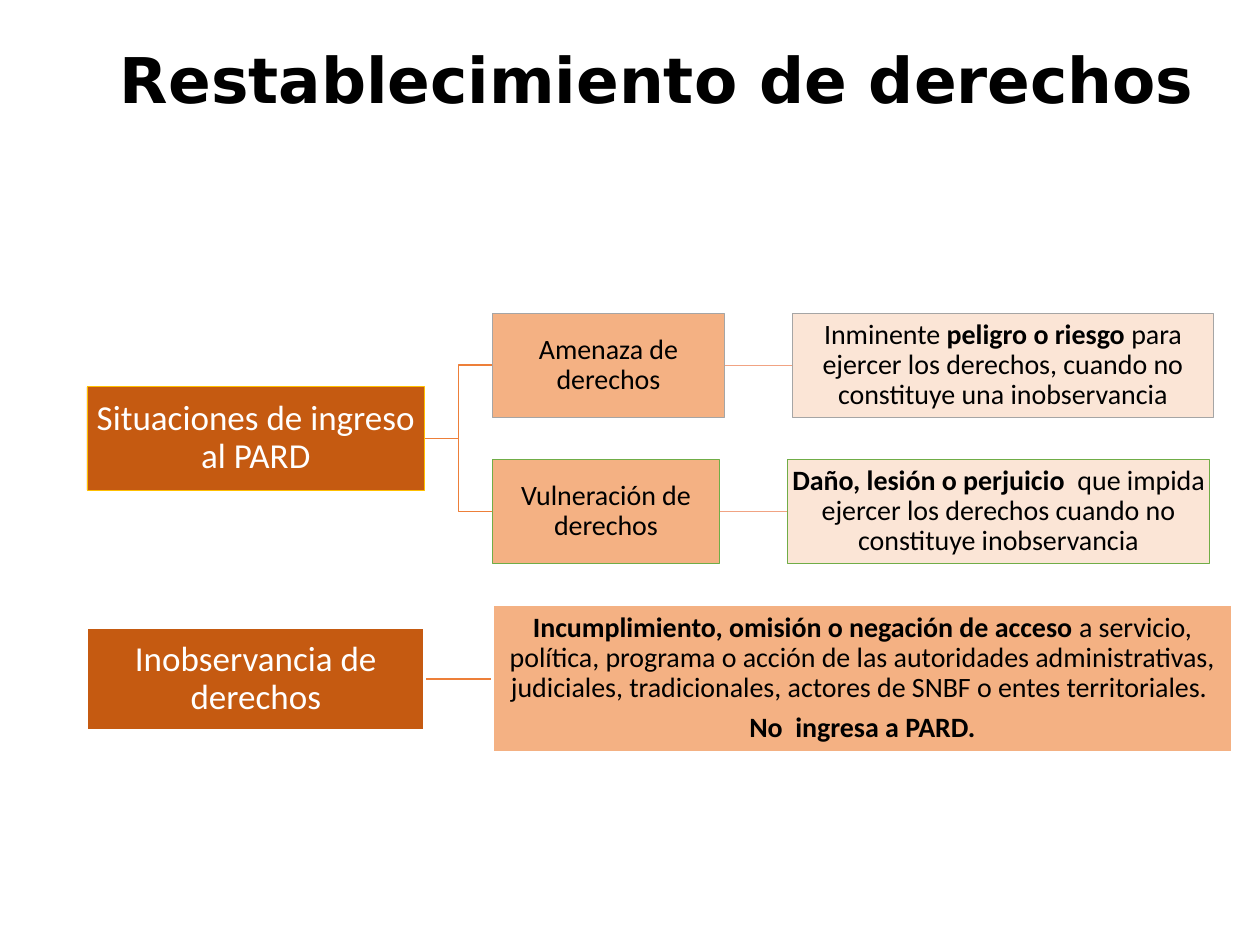
from lxml import etree
from pptx import Presentation
from pptx import util as u
from pptx.dml.color import RGBColor
from pptx.enum import shapes, text
from pptx.oxml.ns import qn

DARK, MEDIUM, PALE = "C55A11", "F4B183", "FBE5D6"
GOLD, GRAY, GREEN, WHITE, BLACK = "FFC000", "A5A5A5", "70AD47", "FFFFFF", "000000"
BRANCH, LEAF = "ED7F39", "F1A383"

ROOT_X, ROOT_WIDTH = 0.69, 2.68
BRANCH_X = 3.91
HEIGHT = 0.82
ROOT_Y, THREAT_Y, HARM_Y, NEGLECT_Y = 3.07, 2.49, 3.65, 4.98


def color(value):
    return RGBColor.from_string(value)


def write(frame, paragraphs, font="Calibri", size=16, ink=BLACK, after=0.35):
    """Fill a frame; each paragraph is a list of (text, bold) spans."""
    frame.word_wrap = True
    for index, spans in enumerate(paragraphs):
        para = frame.add_paragraph() if index else frame.paragraphs[0]
        para.alignment = text.PP_ALIGN.CENTER
        para.line_spacing = 0.9
        para.space_before = u.Pt(0)
        para.space_after = u.Pt(size * after)
        for content, bold in spans:
            span = para.add_run()
            span.text = content
            span.font.name = font
            span.font.size = u.Pt(size)
            span.font.bold = bold
            span.font.color.rgb = color(ink)


def add_title(page, content):
    title = page.shapes.title
    title.left, title.top = u.Inches(0.85), u.Inches(0.3)
    title.width, title.height = u.Inches(8.73), u.Inches(HEIGHT)
    frame = title.text_frame
    frame.auto_size = text.MSO_AUTO_SIZE.NONE
    frame.vertical_anchor = text.MSO_ANCHOR.TOP
    frame.margin_top = u.Inches(0.09)
    write(frame, [[(content, True)]], font="DejaVu Sans", size=36, after=0)


def add_box(page, left, top, width, paragraphs, fill, edge,
            height=HEIGHT, weight=0.5, **style):
    box = page.shapes.add_shape(
        shapes.MSO_SHAPE.RECTANGLE,
        *(u.Inches(value) for value in (left, top, width, height)))
    box.shadow.inherit = False
    box.fill.solid()
    box.fill.fore_color.rgb = color(fill)
    box.line.color.rgb = color(edge)
    box.line.width = u.Pt(weight)
    frame = box.text_frame
    frame.vertical_anchor = text.MSO_ANCHOR.MIDDLE
    frame.margin_left = frame.margin_right = u.Inches(0.01)
    frame.margin_top = frame.margin_bottom = u.Inches(0.01)
    write(frame, paragraphs, **style)


def add_link(page, start, end, ink):
    """Join two points: straight on one level, otherwise with an elbow."""
    kind = shapes.MSO_CONNECTOR.STRAIGHT if start[1] == end[1] else shapes.MSO_CONNECTOR.ELBOW
    link = page.shapes.add_connector(
        kind, *(u.Inches(value) for value in (*start, *end)))
    link.line.color.rgb = color(ink)
    link.line.width = u.Pt(1)
    etree.SubElement(link._element.spPr, qn("a:effectLst"))


def main():
    deck = Presentation()
    deck.slide_width, deck.slide_height = u.Inches(10), u.Inches(7.5)
    page = deck.slides.add_slide(deck.slide_layouts[5])
    add_title(page, "Restablecimiento de derechos")

    # Links between the centres of the box sides
    root, threat, harm, neglect = (
        top + HEIGHT / 2 for top in (ROOT_Y, THREAT_Y, HARM_Y, NEGLECT_Y))
    root_edge = ROOT_X + ROOT_WIDTH
    add_link(page, (root_edge, neglect), (BRANCH_X, neglect), BRANCH)
    add_link(page, (5.71, harm), (6.25, harm), LEAF)
    add_link(page, (root_edge, root), (BRANCH_X, harm), BRANCH)
    add_link(page, (5.75, threat), (6.29, threat), LEAF)
    add_link(page, (root_edge, root), (BRANCH_X, threat), BRANCH)

    # Situations that lead into the process
    add_box(page, ROOT_X, ROOT_Y, ROOT_WIDTH,
            [[("Situaciones de ingreso al PARD", False)]],
            DARK, GOLD, size=20, ink=WHITE)
    add_box(page, BRANCH_X, THREAT_Y, 1.84,
            [[("Amenaza de derechos", False)]], MEDIUM, GRAY)
    add_box(page, 6.29, THREAT_Y, 3.34,
            [[("Inminente ", False), ("peligro o riesgo ", True),
              ("para ejercer los derechos, cuando no constituye una inobservancia", False)]],
            PALE, GRAY)
    add_box(page, BRANCH_X, HARM_Y, 1.8,
            [[("Vulneración de derechos", False)]], MEDIUM, GREEN)
    add_box(page, 6.25, HARM_Y, 3.35,
            [[("Daño, lesión o perjuicio  ", True),
              ("que impida ejercer los derechos cuando no constituye inobservancia", False)]],
            PALE, GREEN)

    # Non-observance, which stays outside the process
    add_box(page, ROOT_X, NEGLECT_Y, ROOT_WIDTH,
            [[("Inobservancia de derechos", False)]],
            DARK, WHITE, weight=1.5, size=20, ink=WHITE)
    add_box(page, BRANCH_X, 4.8, 5.87,
            [[("Incumplimiento, omisión o negación de acceso", True),
              (" a servicio, política, programa o acción de las autoridades "
               "administrativas, judiciales, tradicionales, actores de SNBF "
               "o entes territoriales. ", False)],
             [("No  ingresa a PARD.", True)]],
            MEDIUM, WHITE, height=1.17, weight=1.5)

    deck.save("out.pptx")


if __name__ == "__main__":
    main()
